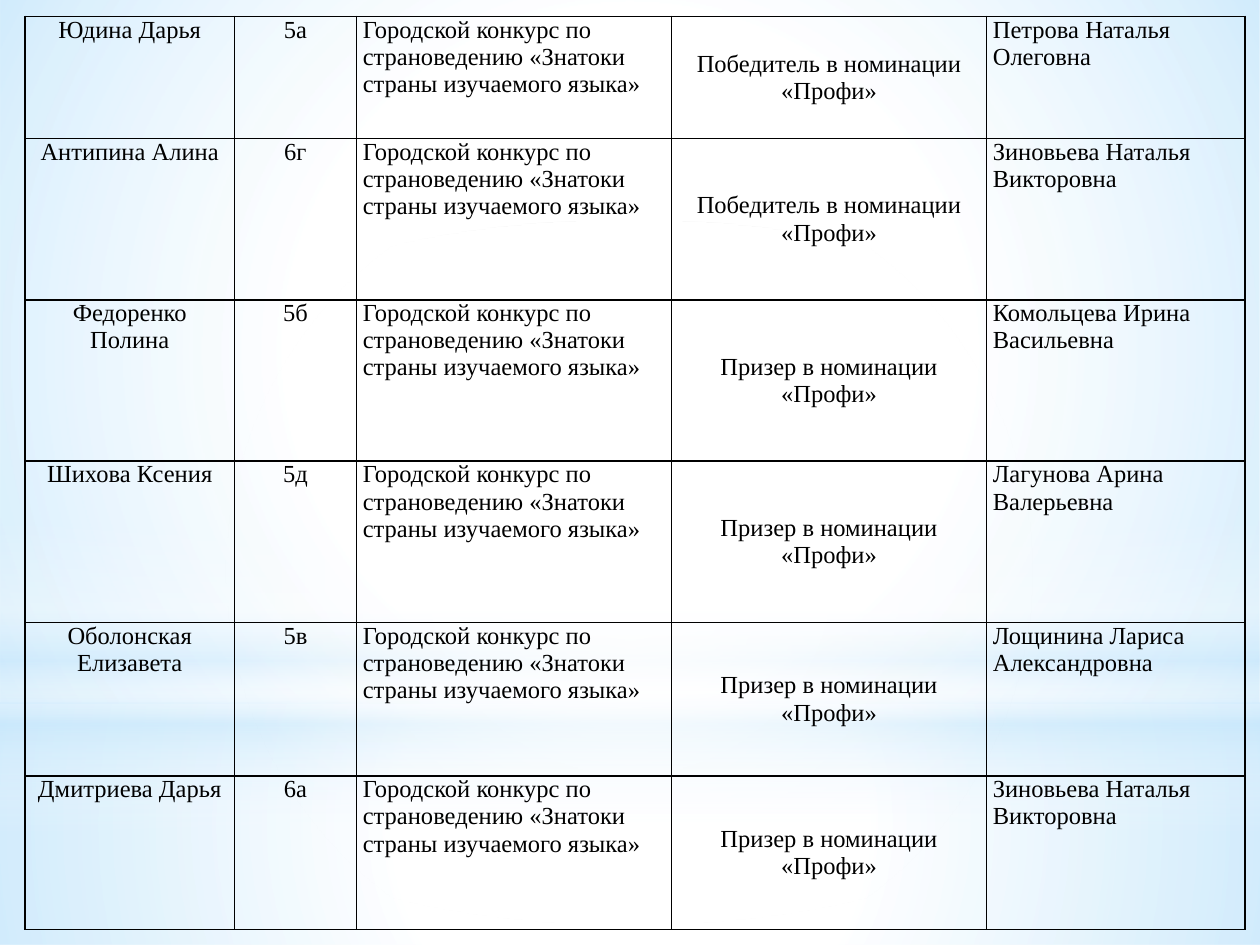
import pptx
import pptx.dml.color
import pptx.enum.shapes
import pptx.enum.text
import pptx.oxml
import pptx.oxml.ns
import pptx.util
from pptx.util import Inches

SHAPES = pptx.enum.shapes.MSO_SHAPE
ALIGN = pptx.enum.text.PP_ALIGN
ANCHOR = pptx.enum.text.MSO_ANCHOR
NS = pptx.oxml.ns.nsdecls("a")

WHITE, SKY, BLACK = "FFFFFF", "C6E7FC", "000000"
RADIAL = ('<a:path path="circle"><a:fillToRect l="50000" t="50000" '
          'r="50000" b="50000"/></a:path>')
VERTICAL = '<a:lin ang="5400000" scaled="0"/>'


def color(hex_string):
    return pptx.dml.color.RGBColor.from_string(hex_string)


class SlideBuilder:
    font = "Times New Roman"
    size = 14
    border = 1

    def __init__(self, slide):
        self.slide = slide

    def background(self, hex_string):
        fill = self.slide.background.fill
        fill.solid()
        fill.fore_color.rgb = color(hex_string)

    def glow(self, kind, left, top, width, height, stops, direction):
        """Add a gradient shape; stops are (position %, colour, opacity %)."""
        shape = self.slide.shapes.add_shape(
            kind, Inches(left), Inches(top), Inches(width), Inches(height))
        shape.shadow.inherit = False
        shape.line.fill.background()
        shape.fill.background()
        stop_xml = "".join(
            f'<a:gs pos="{pos * 1000}"><a:srgbClr val="{tone}">'
            f'<a:alpha val="{opacity * 1000}"/></a:srgbClr></a:gs>'
            for pos, tone, opacity in stops)
        gradient = pptx.oxml.parse_xml(
            f'<a:gradFill {NS} rotWithShape="1"><a:gsLst>{stop_xml}</a:gsLst>'
            f'{direction}</a:gradFill>')
        properties = shape.fill._xPr
        properties.replace(properties.find(pptx.oxml.ns.qn("a:noFill")), gradient)

    def table(self, left, top, widths, heights, rows, aligns, anchors):
        table = self.slide.shapes.add_table(
            len(heights), len(widths), Inches(left), Inches(top),
            Inches(sum(widths)), Inches(sum(heights))).table
        table.first_row = table.horz_banding = False
        for column, width in zip(table.columns, widths):
            column.width = Inches(width)
        for row, height, texts in zip(table.rows, heights, rows):
            row.height = Inches(height)
            for cell, text, align, anchor in zip(row.cells, texts, aligns, anchors):
                self.cell(cell, text, align, anchor)

    def cell(self, cell, text, align, anchor):
        cell.margin_left = cell.margin_right = Inches(0.05)
        cell.margin_top = cell.margin_bottom = 0
        cell.vertical_anchor = anchor
        cell.text_frame.text = text
        paragraph = cell.text_frame.paragraphs[0]
        paragraph.alignment = align
        for run in paragraph.runs:
            run.font.name = self.font
            run.font.size = pptx.util.Pt(self.size)
            run.font.color.rgb = color(BLACK)
        properties = cell._tc.get_or_add_tcPr()
        for side in "LRTB":
            properties.append(pptx.oxml.parse_xml(
                f'<a:ln{side} {NS} w="{pptx.util.Pt(self.border)}"><a:solidFill>'
                f'<a:srgbClr val="{BLACK}"/></a:solidFill></a:ln{side}>'))
        cell.fill.background()


CONTEST = "Городской конкурс по страноведению «Знатоки страны изучаемого языка»"
WINNER = "Победитель в номинации «Профи»"
RUNNER_UP = "Призер в номинации «Профи»"

# Pupil, class, award, teacher
PUPILS = [
    ("Юдина Дарья", "5а", WINNER, "Петрова Наталья Олеговна"),
    ("Антипина Алина", "6г", WINNER, "Зиновьева Наталья Викторовна"),
    ("Федоренко Полина", "5б", RUNNER_UP, "Комольцева Ирина Васильевна"),
    ("Шихова Ксения", "5д", RUNNER_UP, "Лагунова Арина Валерьевна"),
    ("Оболонская Елизавета", "5в", RUNNER_UP, "Лощинина Лариса Александровна"),
    ("Дмитриева Дарья", "6а", RUNNER_UP, "Зиновьева Наталья Викторовна"),
]


def main():
    deck = pptx.Presentation()
    deck.slide_width, deck.slide_height = Inches(10), Inches(7.5)
    builder = SlideBuilder(deck.slides.add_slide(deck.slide_layouts[6]))

    # Sky backdrop: ground, sky, horizon and central light
    builder.background(WHITE)
    builder.glow(SHAPES.RECTANGLE, 0, 5.58, 10, 1.92,
                 [(0, WHITE, 91), (37, WHITE, 76), (100, SKY, 79)], RADIAL)
    builder.glow(SHAPES.RECTANGLE, 0, 0, 10, 5.58,
                 [(0, WHITE, 89), (48, WHITE, 62), (100, SKY, 79)], RADIAL)
    builder.glow(SHAPES.RECTANGLE, 0, 4.12, 10, 2.5,
                 [(0, WHITE, 0), (29, WHITE, 30), (45, SKY, 40),
                  (55, WHITE, 26), (65, SKY, 60), (100, WHITE, 0)], VERTICAL)
    builder.glow(SHAPES.OVAL, 0, 1.75, 10, 5.58,
                 [(0, WHITE, 100), (56, WHITE, 0)], RADIAL)

    # Contest results
    builder.table(
        0.2, 0.13,
        widths=[1.66, 0.97, 2.5, 2.5, 2.05],
        heights=[0.97] + [1.28] * 3 + [1.22] * 2,
        rows=[(pupil, grade, CONTEST, award, teacher)
              for pupil, grade, award, teacher in PUPILS],
        aligns=[ALIGN.CENTER, ALIGN.CENTER, ALIGN.LEFT, ALIGN.CENTER, ALIGN.LEFT],
        anchors=[ANCHOR.TOP] * 3 + [ANCHOR.MIDDLE, ANCHOR.TOP])

    deck.save("out.pptx")


if __name__ == "__main__":
    main()
